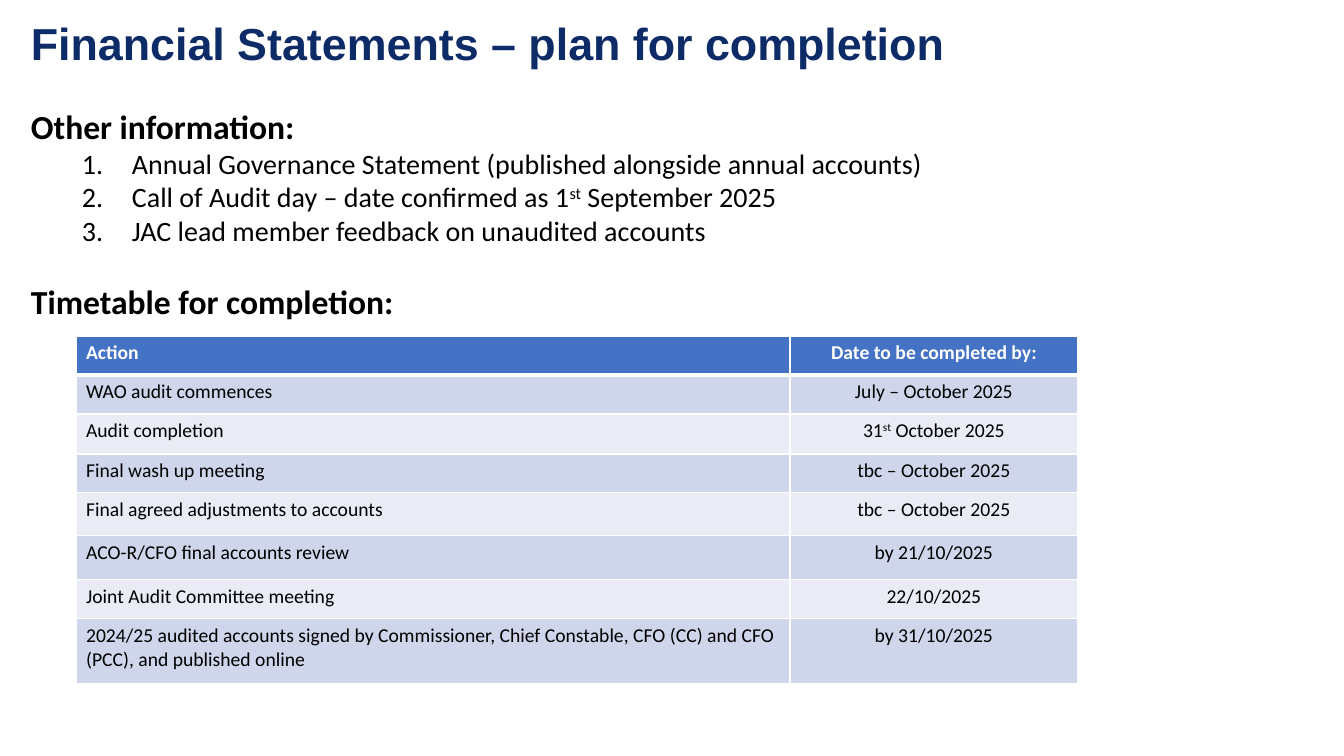
from dataclasses import dataclass

from lxml import etree
from pptx import Presentation
from pptx.dml.color import RGBColor
from pptx.enum.text import MSO_ANCHOR, MSO_AUTO_SIZE, PP_ALIGN
from pptx.oxml.ns import qn
from pptx.util import Pt

PX = 914400 / 100.8
LEFT, CENTER = PP_ALIGN.LEFT, PP_ALIGN.CENTER
MIDDLE = MSO_ANCHOR.MIDDLE
GROW = MSO_AUTO_SIZE.SHAPE_TO_FIT_TEXT


@dataclass(frozen=True)
class Theme:
    title_font: str = "Arial"
    body_font: str = "Calibri"
    navy: str = "0D2B67"
    black: str = "000000"
    white: str = "FFFFFF"
    header: str = "4472C4"
    bands: tuple = ("CFD5EA", "E9EBF5")
    title_size: int = 32
    heading_size: int = 24
    list_size: int = 20
    table_size: int = 14


THEME = Theme()


def px(length):
    return round(length * PX)


def write(paragraph, text, size, color=THEME.black, font=THEME.body_font,
          bold=False, align=LEFT, numbered=False, before=0):
    """Fill a paragraph; text between ^ marks is superscript."""
    if numbered:
        properties = paragraph._p.get_or_add_pPr()
        properties.set("marL", str(px(101)))
        properties.set("indent", str(-px(50)))
        etree.SubElement(properties, qn("a:buFont"), typeface="+mj-lt")
        etree.SubElement(properties, qn("a:buAutoNum"), type="arabicPeriod")
    paragraph.alignment = align
    if before:
        paragraph.space_before = Pt(before)
    for index, part in enumerate(text.split("^")):
        run = paragraph.add_run()
        run.text = part
        run.font.name = font
        run.font.size = Pt(size)
        run.font.bold = bold
        run.font.color.rgb = RGBColor.from_string(color)
        if index % 2:
            run._r.get_or_add_rPr().set("baseline", "30000")


prs = Presentation()
prs.slide_width, prs.slide_height = px(1344), px(756)
slide = prs.slides.add_slide(prs.slide_layouts[6])

# Title
title = slide.shapes.add_textbox(px(21), px(13), px(1113), px(65)).text_frame
title.word_wrap = True
title.vertical_anchor = MIDDLE
title.paragraphs[0].line_spacing = 0.9
write(title.paragraphs[0], "Financial Statements – plan for completion",
      size=THEME.title_size, color=THEME.navy, font=THEME.title_font, bold=True)

# Other information and the timetable heading
information = slide.shapes.add_textbox(px(21), px(101), px(1112), px(261)).text_frame
information.word_wrap = True
information.auto_size = GROW
write(information.paragraphs[0], "Other information:", size=THEME.heading_size, bold=True)
for item in (
    "Annual Governance Statement (published alongside annual accounts)",
    "Call of Audit day – date confirmed as 1^st^ September 2025",
    "JAC lead member feedback on unaudited accounts",
):
    write(information.add_paragraph(), item, size=THEME.list_size, numbered=True)
write(information.add_paragraph(), "Timetable for completion:",
      size=THEME.heading_size, bold=True, before=24)

# Timetable: action, date, row height
timetable_rows = [
    ("Action", "Date to be completed by:", 39),
    ("WAO audit commences", "July – October 2025", 39),
    ("Audit completion", "31^st^ October 2025", 40),
    ("Final wash up meeting", "tbc – October 2025", 39),
    ("Final agreed adjustments to accounts", "tbc – October 2025", 43),
    ("ACO-R/CFO final accounts review", "by 21/10/2025", 44),
    ("Joint Audit Committee meeting", "22/10/2025", 39),
    ("2024/25 audited accounts signed by Commissioner, Chief Constable, "
     "CFO (CC) and CFO (PCC), and published online", "by 31/10/2025", 65),
]
column_widths = (714, 288)
timetable = slide.shapes.add_table(
    len(timetable_rows), len(column_widths), px(76), px(336),
    px(sum(column_widths)), px(sum(row[2] for row in timetable_rows))).table
for column, width in zip(timetable.columns, column_widths):
    column.width = px(width)

for row, (action, date, height) in enumerate(timetable_rows):
    timetable.rows[row].height = px(height)
    is_header = row == 0
    band = THEME.header if is_header else THEME.bands[(row - 1) % 2]
    for column, (text, align) in enumerate(((action, LEFT), (date, CENTER))):
        cell = timetable.cell(row, column)
        write(cell.text_frame.paragraphs[0], text, size=THEME.table_size, align=align,
              bold=is_header, color=THEME.white if is_header else THEME.black)
        # Borders come before the fill in the cell properties
        cell_properties = cell._tc.get_or_add_tcPr()
        for side in "LRTB":
            points = 3 if is_header and side == "B" else 1
            border = etree.SubElement(cell_properties, qn(f"a:ln{side}"), w=str(Pt(points)))
            border_fill = etree.SubElement(border, qn("a:solidFill"))
            etree.SubElement(border_fill, qn("a:srgbClr"), val=THEME.white)
        cell.fill.solid()
        cell.fill.fore_color.rgb = RGBColor.from_string(band)

prs.save("out.pptx")
